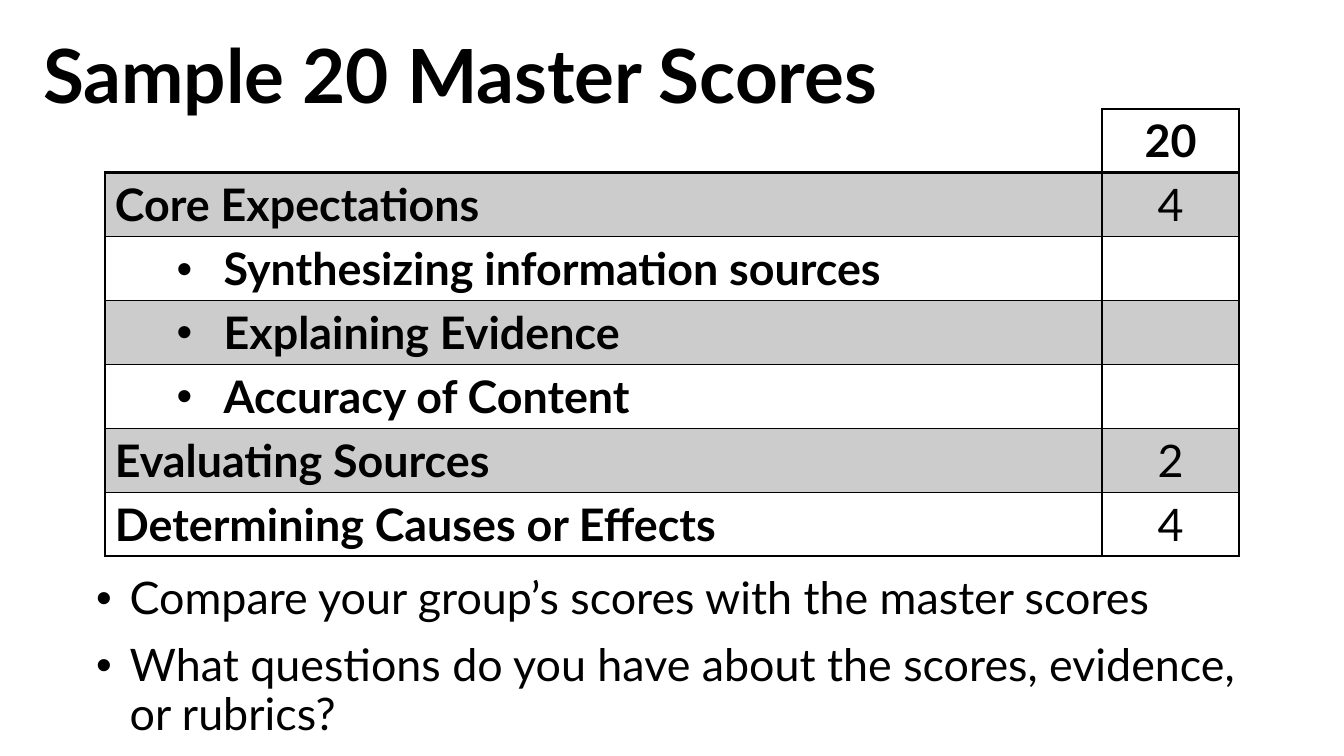
from lxml import etree
from pptx import Presentation
from pptx import util as u
from pptx.dml.color import RGBColor
from pptx.enum import text
from pptx.oxml.ns import qn

FONT = "Lato"
INK = "000000"
MARGINS = {"margin_left": u.Pt(5.4), "margin_right": u.Pt(5.4),
           "margin_top": u.Pt(2.7), "margin_bottom": u.Pt(2.7)}
SCORES = [
    ("", "20"),
    ("Core Expectations", "4"),
    ("• Synthesizing information sources", ""),
    ("• Explaining Evidence", ""),
    ("• Accuracy of Content", ""),
    ("Evaluating Sources", "2"),
    ("Determining Causes or Effects", "4"),
]
SHADED_ROWS = {1, 3, 5}
PROMPTS = [
    "Compare your group’s scores with the master scores",
    "What questions do you have about the scores, evidence, or rubrics?",
]


def color(value):
    return RGBColor.from_string(value)


def apply(target, values):
    for name, value in values.items():
        setattr(target, name, value)


def add_child(parent, tag, **attributes):
    return etree.SubElement(parent, qn(tag), attributes)


def write(paragraph, words, size=24, bold=False, align=text.PP_ALIGN.LEFT):
    paragraph.alignment = align
    run = paragraph.add_run()
    run.text = words
    apply(run.font, {"name": FONT, "size": u.Pt(size), "bold": bold})
    run.font.color.rgb = color(INK)


def add_bullet(paragraph, left, hanging):
    properties = paragraph._p.get_or_add_pPr()
    properties.set("marL", str(u.Inches(left)))
    properties.set("indent", str(-u.Inches(hanging)))
    add_child(add_child(properties, "a:buClr"), "a:srgbClr", val=INK)
    add_child(properties, "a:buFont", typeface="Arial")
    add_child(properties, "a:buChar", char="•")


def set_borders(cell, widths):
    properties = cell._tc.get_or_add_tcPr()
    for side, width in widths.items():
        line = add_child(properties, f"a:ln{side}", w=str(u.Pt(width)))
        if width:
            add_child(add_child(line, "a:solidFill"), "a:srgbClr", val=INK)
        else:
            add_child(line, "a:noFill")


def shade(cell, opacity):
    cell.fill.solid()
    cell.fill.fore_color.rgb = color(INK)
    tint = cell._tc.tcPr.find(qn("a:solidFill")).find(qn("a:srgbClr"))
    add_child(tint, "a:alpha", val=str(opacity * 1000))


def place_title(slide, left, top, width, height):
    title = slide.shapes.title
    apply(title, {"left": u.Inches(left), "top": u.Inches(top),
                  "width": u.Inches(width), "height": u.Inches(height)})
    apply(title.text_frame, {"vertical_anchor": text.MSO_ANCHOR.MIDDLE,
                             "auto_size": text.MSO_AUTO_SIZE.NONE})
    write(title.text_frame.paragraphs[0], "Sample 20 Master Scores", 40, True)


def place_scores(slide, left, top, width, height, score_width=1.02):
    frame = slide.shapes.add_table(
        len(SCORES), 2, u.Inches(left), u.Inches(top), u.Inches(width), u.Inches(height))
    table = frame.table
    apply(table, {"first_row": False, "horz_banding": False})
    table.columns[0].width = u.Inches(width - score_width)
    table.columns[1].width = u.Inches(score_width)
    for row, entries in enumerate(SCORES):
        table.rows[row].height = u.Inches(height / len(SCORES))
        for column, words in enumerate(entries):
            cell = table.cell(row, column)
            apply(cell, MARGINS)
            outer = 0 if row == column == 0 else 1
            set_borders(cell, {"L": outer, "R": 1,
                               "T": 2 if row == 1 else outer,
                               "B": 2 if row == 0 else 1})
            if row in SHADED_ROWS:
                shade(cell, 20)
            else:
                cell.fill.background()
            if not words:
                continue
            paragraph = cell.text_frame.paragraphs[0]
            align = text.PP_ALIGN.CENTER if column else text.PP_ALIGN.LEFT
            write(paragraph, words.removeprefix("• "),
                  bold=column == 0 or row == 0, align=align)
            if words.startswith("• "):
                paragraph.level = 1
                add_bullet(paragraph, 0.81, 0.35)


def place_prompts(slide, left, top, width, height):
    box = slide.shapes.add_textbox(
        u.Inches(left), u.Inches(top), u.Inches(width), u.Inches(height))
    prompts = box.text_frame
    apply(prompts, {"word_wrap": True, **MARGINS})
    for index, words in enumerate(PROMPTS):
        paragraph = prompts.add_paragraph() if index else prompts.paragraphs[0]
        apply(paragraph, {"line_spacing": 0.9, "space_before": u.Pt(10 if index else 0)})
        write(paragraph, words)
        add_bullet(paragraph, 0.25, 0.25)


def main():
    deck = Presentation()
    apply(deck, {"slide_width": u.Inches(10), "slide_height": u.Inches(10 * 9 / 16)})
    slide = deck.slides.add_slide(deck.slide_layouts[5])
    place_title(slide, 0.22, 0, 8.62, 1.09)
    place_scores(slide, 0.78, 0.81, 8.44, 3.33)
    place_prompts(slide, 0.64, 4.25, 8.83, 1.27)
    deck.save("out.pptx")


if __name__ == "__main__":
    main()
